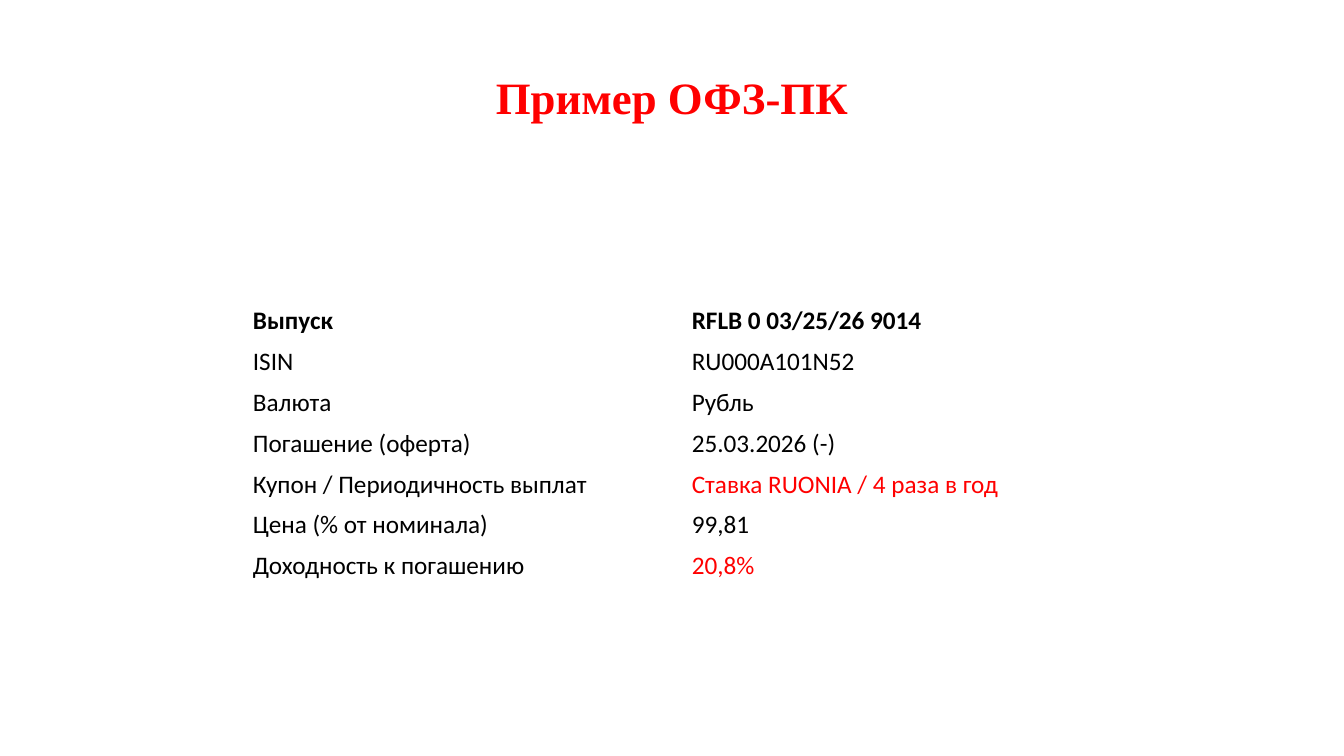
from dataclasses import dataclass

from pptx import Presentation
from pptx.dml.color import RGBColor
from pptx.enum.text import MSO_ANCHOR, PP_ALIGN
from pptx.util import Cm, Pt


@dataclass(frozen=True)
class Theme:
    text: RGBColor = RGBColor(0x00, 0x00, 0x00)
    accent: RGBColor = RGBColor(0xFF, 0x00, 0x00)
    title_font: str = "Times New Roman"
    body_font: str = "Calibri"
    title_size: Pt = Pt(32)
    body_size: Pt = Pt(18)


def format_runs(paragraph, name, size, color, bold):
    for run in paragraph.runs:
        run.font.name = name
        run.font.size = size
        run.font.color.rgb = color
        run.font.bold = bold


theme = Theme()
presentation = Presentation()
presentation.slide_width = Cm(33.87)
presentation.slide_height = Cm(19.05)
slide = presentation.slides.add_slide(presentation.slide_layouts[6])

# Title
title = slide.shapes.add_textbox(Cm(2.33), Cm(1.01), Cm(29.21), Cm(3.02))
title_frame = title.text_frame
title_frame.word_wrap = True
title_frame.vertical_anchor = MSO_ANCHOR.MIDDLE
title_frame.text = "Пример ОФЗ-ПК"
title_paragraph = title_frame.paragraphs[0]
title_paragraph.alignment = PP_ALIGN.CENTER
title_paragraph.line_spacing = 0.9
format_runs(title_paragraph, theme.title_font, theme.title_size, theme.accent, True)

# Bond parameters
bond_rows = [
    ("Выпуск", "RFLB 0 03/25/26 9014"),
    ("ISIN", "RU000A101N52"),
    ("Валюта", "Рубль"),
    ("Погашение (оферта)", "25.03.2026 (-)"),
    ("Купон / Периодичность выплат", "Ставка RUONIA / 4 раза в год"),
    ("Цена (% от номинала)", "99,81"),
    ("Доходность к погашению", "20,8%"),
]
highlighted_values = {"Ставка RUONIA / 4 раза в год", "20,8%"}
column_width = Cm(11.06)
row_height = Cm(1.03)

table = slide.shapes.add_table(
    len(bond_rows), 2, Cm(6.12), Cm(7.57),
    2 * column_width, len(bond_rows) * row_height,
).table
table.first_row = False
table.horz_banding = False

for row_index, bond_row in enumerate(bond_rows):
    for column_index, value in enumerate(bond_row):
        cell = table.cell(row_index, column_index)
        cell.fill.background()
        cell.vertical_anchor = MSO_ANCHOR.MIDDLE
        cell.text_frame.text = value
        color = theme.accent if value in highlighted_values else theme.text
        format_runs(cell.text_frame.paragraphs[0], theme.body_font,
                    theme.body_size, color, row_index == 0)

presentation.save("out.pptx")
